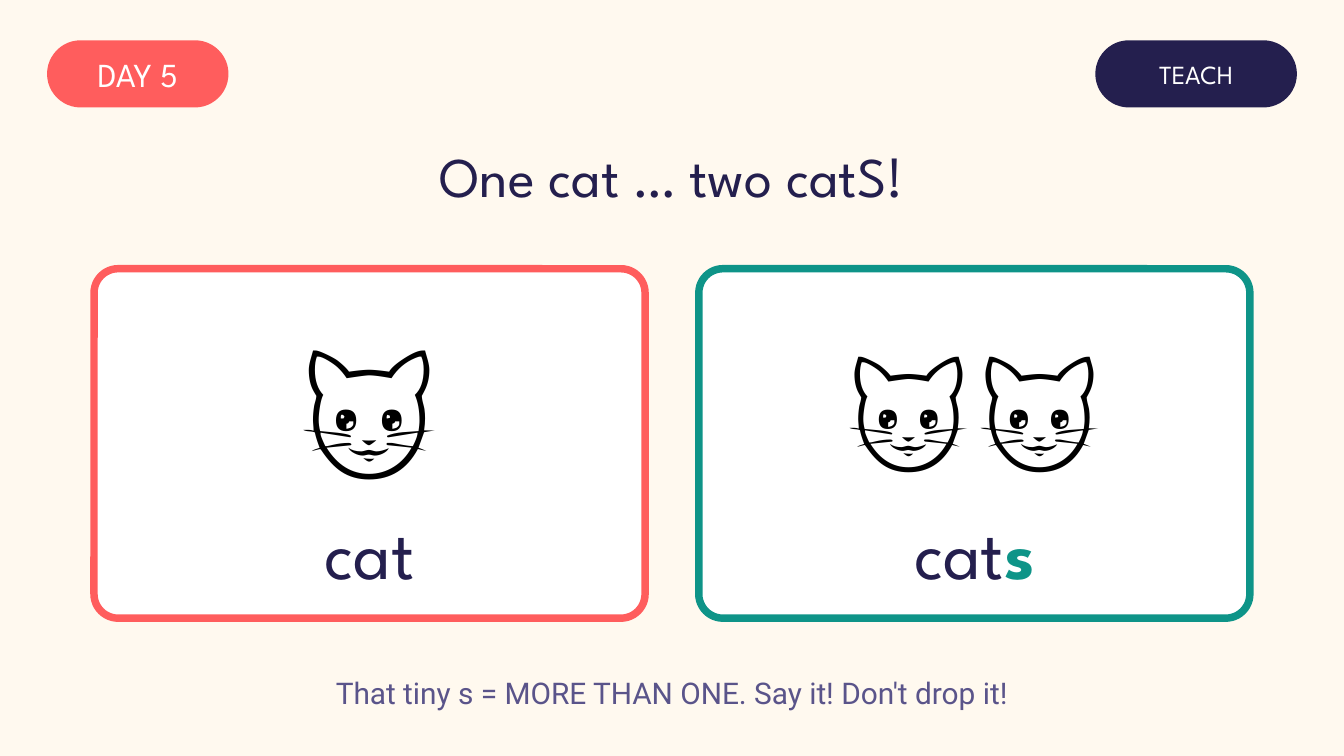
from pptx import Presentation
from pptx.dml.color import RGBColor
from pptx.enum.shapes import MSO_SHAPE
from pptx.enum.text import MSO_ANCHOR, PP_ALIGN
from pptx.util import Pt

ROUNDED = MSO_SHAPE.ROUNDED_RECTANGLE
TOP, MIDDLE = MSO_ANCHOR.TOP, MSO_ANCHOR.MIDDLE
CENTER = PP_ALIGN.CENTER

WIDTH, HEIGHT = 720, 405
CREAM, WHITE, BLACK = "FFF9EF", "FFFFFF", "000000"
CORAL, TEAL, NAVY, PURPLE = "FF5D5D", "0E9488", "241F4E", "5A548A"
HEADING, BODY, EMOJI = "League Spartan", "Roboto", "Calibri"


def color(value):
    return RGBColor.from_string(value)


class Slide:
    """Holds the slide style and draws each kind of element."""

    def __init__(self, deck):
        self.page = deck.slides.add_slide(deck.slide_layouts[6])
        background = self.page.background.fill
        background.solid()
        background.fore_color.rgb = color(CREAM)

    def panel(self, left, top, width, height, fill, corner, border=None):
        shape = self.page.shapes.add_shape(
            ROUNDED, Pt(left), Pt(top), Pt(width), Pt(height))
        shape.adjustments[0] = corner
        shape.shadow.inherit = False
        shape.fill.solid()
        shape.fill.fore_color.rgb = color(fill)
        if border:
            shape.line.color.rgb = color(border)
            shape.line.width = Pt(4)
        else:
            shape.line.fill.background()

    def text(self, left, top, width, height, words, size, ink=NAVY,
             font=HEADING, anchor=MIDDLE, inset=True):
        box = self.page.shapes.add_textbox(
            Pt(left), Pt(top), Pt(width), Pt(height))
        frame = box.text_frame
        frame.word_wrap = True
        frame.vertical_anchor = anchor
        if not inset:
            frame.margin_left = frame.margin_right = 0
            frame.margin_top = frame.margin_bottom = 0
        para = frame.paragraphs[0]
        para.alignment = CENTER
        para.font.size = Pt(size)
        para.font.name = font
        para.font.color.rgb = color(ink)
        para.add_run().text = words
        return para

    def pill(self, left, width, label, size, fill):
        area = (left, 21.6, width, 36)
        self.panel(*area, fill, 0.5)
        self.text(*area, label, size, WHITE, inset=False)

    def card(self, left, border, cats, cats_top, cats_height, cats_size,
             ending=""):
        width = 295.2
        self.panel(left, 144, width, 187.2, WHITE, 0.069, border)
        self.text(left, cats_top, width, cats_height, cats, cats_size,
                  BLACK, EMOJI, TOP)
        para = self.text(left, 273.6, width, 43.2, "cat", 38)
        if ending:
            span = para.add_run()
            span.text = ending
            span.font.bold = True
            span.font.color.rgb = color(border)


def main():
    deck = Presentation()
    deck.slide_width, deck.slide_height = Pt(WIDTH), Pt(HEIGHT)
    slide = Slide(deck)

    # Header pills and title
    slide.pill(25.2, 97.2, "DAY 5", 18, CORAL)
    slide.pill(586.8, 108, "TEACH", 14, NAVY)
    slide.text(0, 68.4, WIDTH, 50.4, "One cat … two catS!", 30)

    # Singular and plural cards
    slide.card(50.4, CORAL, "🐱", 151.2, 108, 96)
    slide.card(374.4, TEAL, "🐱🐱", 158.4, 93.6, 86, ending="s")

    # Reminder
    slide.text(0, 356.4, WIDTH, 28.8,
               "That tiny s = MORE THAN ONE. Say it! Don't drop it!",
               16, PURPLE, BODY)

    deck.save("out.pptx")


if __name__ == "__main__":
    main()
